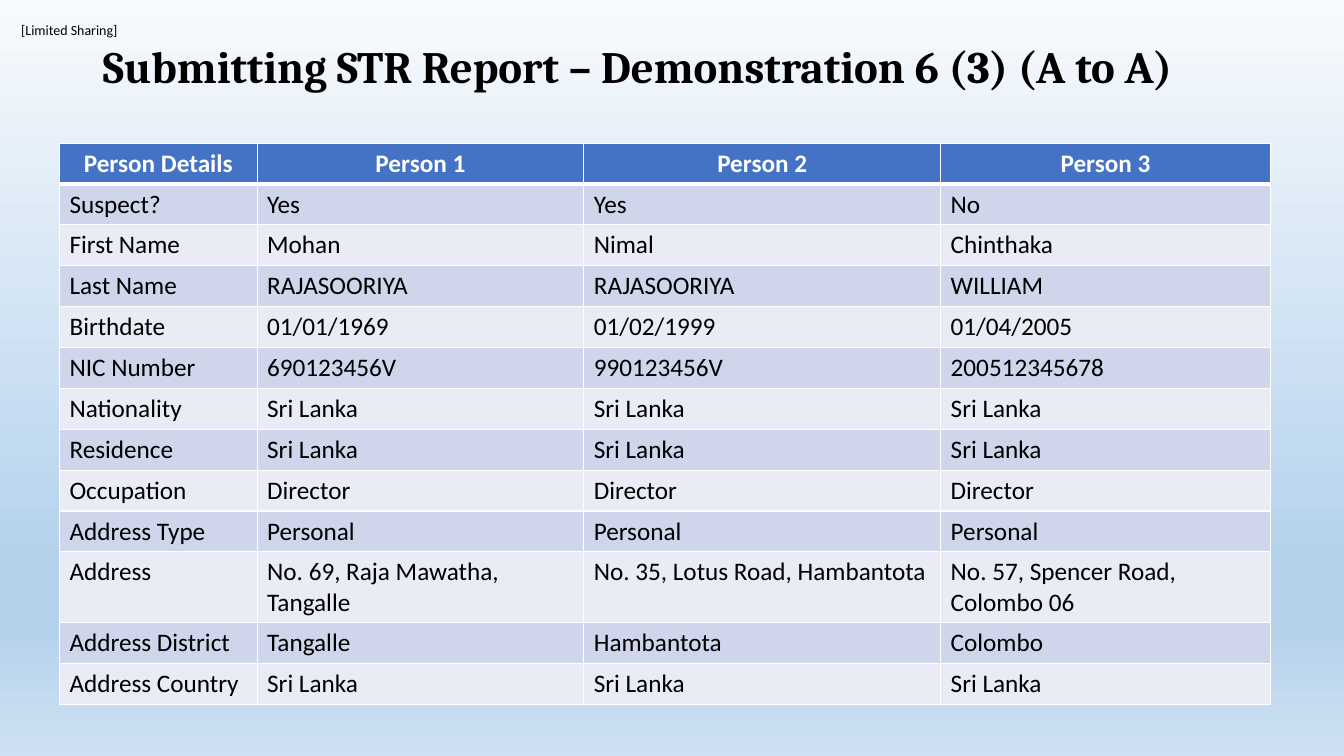
from dataclasses import dataclass

from lxml.etree import SubElement
from pptx import Presentation
from pptx.dml.color import RGBColor
from pptx.enum.text import MSO_ANCHOR as Anchor, PP_ALIGN as Align
from pptx.oxml.ns import qn
from pptx.util import Inches, Pt


@dataclass(frozen=True)
class Theme:
    body_font: str = "Calibri"
    title_font: str = "Cambria"
    tag_size: int = 10
    table_size: int = 18
    title_size: int = 32
    ink: str = "000000"
    white: str = "FFFFFF"
    header: str = "4472C4"
    bands: tuple = ("CFD5EA", "E9EBF5")
    gradient: tuple = ((0, "F7FAFD"), (74, "B5D2EC"), (83, "B5D2EC"), (100, "CEE1F2"))
    thin: int = 1
    thick: int = 3


@dataclass(frozen=True)
class Box:
    left: float
    top: float
    width: float
    height: float

    def emu(self) -> list:
        return [Inches(v) for v in (self.left, self.top, self.width, self.height)]


@dataclass(frozen=True)
class Detail:
    label: str
    values: tuple


THEME = Theme()
TAG_BOX = Box(0.21, 0.21, 0.99, 0.17)
TITLE_BOX = Box(0.92, 0.25, 11.98, 0.87)
TABLE_BOX = Box(0.59, 1.42, 12.01, 5.57)
COLUMN_WIDTHS = (1.96, 3.24, 3.54, 3.27)
ADDRESS_HEIGHT = 0.7

DETAILS = [
    Detail("Person Details", ("Person 1", "Person 2", "Person 3")),
    Detail("Suspect?", ("Yes", "Yes", "No")),
    Detail("First Name", ("Mohan", "Nimal", "Chinthaka")),
    Detail("Last Name", ("RAJASOORIYA", "RAJASOORIYA", "WILLIAM")),
    Detail("Birthdate", ("01/01/1969", "01/02/1999", "01/04/2005")),
    Detail("NIC Number", ("690123456V", "990123456V", "200512345678")),
    Detail("Nationality", ("Sri Lanka",) * 3),
    Detail("Residence", ("Sri Lanka",) * 3),
    Detail("Occupation", ("Director",) * 3),
    Detail("Address Type", ("Personal",) * 3),
    Detail("Address", ("No. 69, Raja Mawatha, Tangalle",
                       "No. 35, Lotus Road, Hambantota",
                       "No. 57, Spencer Road, Colombo 06")),
    Detail("Address District", ("Tangalle", "Hambantota", "Colombo")),
    Detail("Address Country", ("Sri Lanka",) * 3),
]


def set_attrs(target, values: dict) -> None:
    for name, value in values.items():
        setattr(target, name, value)


def write(tf, text: str, font: str, size: int, color: str,
          bold: bool = False, align=Align.LEFT) -> None:
    p = tf.paragraphs[0]
    p.alignment = align
    r = p.add_run()
    r.text = text
    set_attrs(r.font, {"name": font, "size": Pt(size), "bold": bold})
    r.font.color.rgb = RGBColor.from_string(color)


def set_background(s) -> None:
    fill = s.background.fill
    fill.gradient()
    fill.gradient_angle = 270
    stops = s.element.find(".//" + qn("a:gsLst"))
    stops.clear()
    for percent, color in THEME.gradient:
        stop = SubElement(stops, qn("a:gs"), pos=str(percent * 1000))
        SubElement(stop, qn("a:srgbClr"), val=color)


def set_borders(cell, top: int, bottom: int) -> None:
    widths = {"L": THEME.thin, "R": THEME.thin, "T": top, "B": bottom}
    tc_pr = cell._tc.get_or_add_tcPr()
    for side, width in widths.items():
        line = SubElement(tc_pr, qn(f"a:ln{side}"), w=str(Pt(width)))
        fill = SubElement(line, qn("a:solidFill"))
        SubElement(fill, qn("a:srgbClr"), val=THEME.white)


def add_tag(s) -> None:
    tf = s.shapes.add_textbox(*TAG_BOX.emu()).text_frame
    set_attrs(tf, {"margin_left": 0, "margin_right": 0, "margin_top": 0,
                   "margin_bottom": 0, "word_wrap": False})
    write(tf, "[Limited Sharing]", THEME.body_font, THEME.tag_size, THEME.ink)


def add_title(s) -> None:
    title = s.shapes.title
    set_attrs(title, dict(zip(("left", "top", "width", "height"), TITLE_BOX.emu())))
    tf = title.text_frame
    set_attrs(tf, {"vertical_anchor": Anchor.MIDDLE, "word_wrap": True})
    write(tf, "Submitting STR Report – Demonstration 6 (3) (A to A)",
          THEME.title_font, THEME.title_size, THEME.ink, bold=True)
    tf.paragraphs[0].line_spacing = 0.9


def add_details(s) -> None:
    table = s.shapes.add_table(len(DETAILS), len(COLUMN_WIDTHS), *TABLE_BOX.emu()).table
    for column, width in zip(table.columns, COLUMN_WIDTHS):
        column.width = Inches(width)
    row_height = (TABLE_BOX.height - ADDRESS_HEIGHT) / (len(DETAILS) - 1)
    for i, detail in enumerate(DETAILS):
        is_header = i == 0
        is_address = detail.label == "Address"
        table.rows[i].height = Inches(ADDRESS_HEIGHT if is_address else row_height)
        for j, text in enumerate((detail.label, *detail.values)):
            cell = table.cell(i, j)
            set_borders(cell, top=THEME.thick if i == 1 else THEME.thin,
                        bottom=THEME.thick if is_header else THEME.thin)
            cell.fill.solid()
            color = THEME.header if is_header else THEME.bands[(i - 1) % 2]
            cell.fill.fore_color.rgb = RGBColor.from_string(color)
            write(cell.text_frame, text, THEME.body_font, THEME.table_size,
                  THEME.white if is_header else THEME.ink, bold=is_header,
                  align=Align.CENTER if is_header else Align.LEFT)


def main() -> None:
    prs = Presentation()
    set_attrs(prs, {"slide_width": Inches(13.33), "slide_height": Inches(7.5)})
    s = prs.slides.add_slide(prs.slide_layouts[5])  # title only
    set_background(s)
    add_tag(s)
    add_details(s)
    add_title(s)
    prs.save("out.pptx")


if __name__ == "__main__":
    main()
